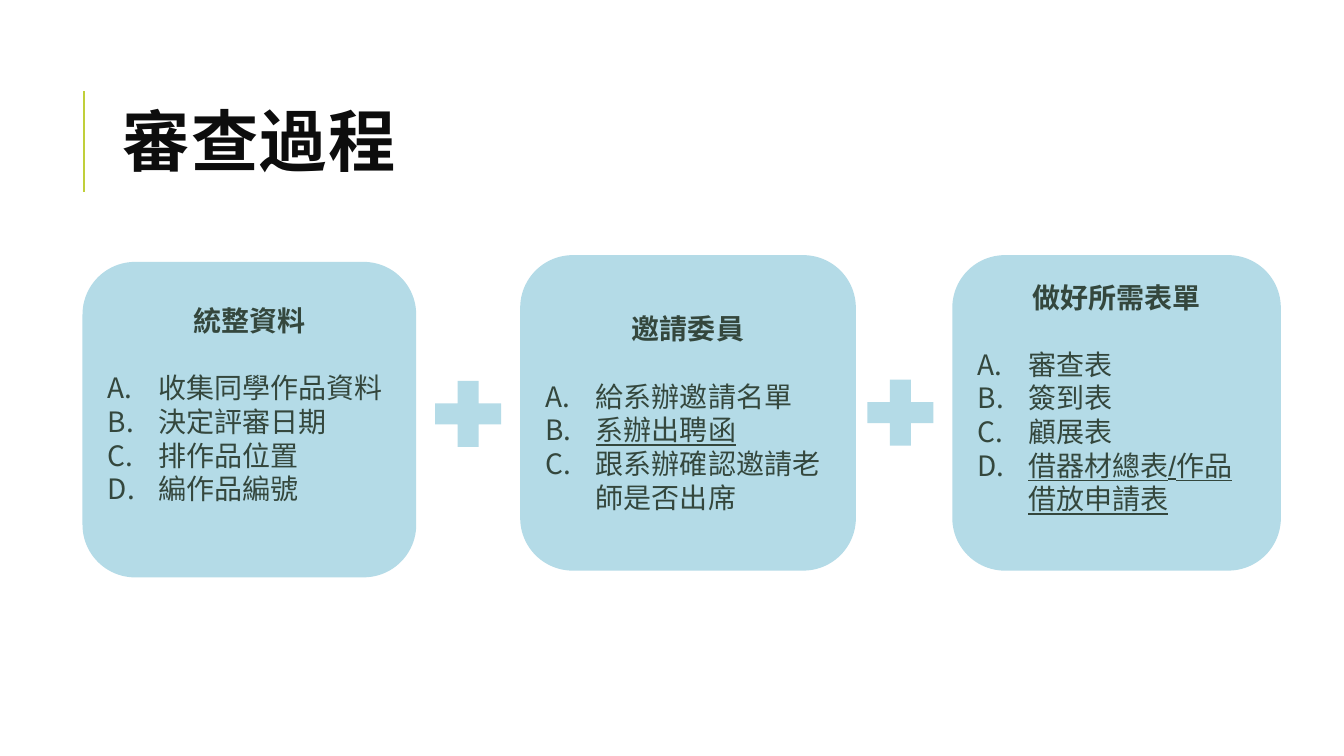
import pptx
import pptx.dml.color
import pptx.enum.shapes
import pptx.enum.text
import pptx.oxml.ns
import pptx.oxml.xmlchemy
import pptx.util
from pptx.util import Cm

SHAPES = pptx.enum.shapes.MSO_SHAPE
ALIGN = pptx.enum.text.PP_ALIGN
MIDDLE = pptx.enum.text.MSO_ANCHOR.MIDDLE
COLOURS = {"title": "0D0D0D", "text": "34473D", "card": "0989B1", "accent": "C0CF3A"}


def add_xml(parent, tag, **attributes):
    element = pptx.oxml.xmlchemy.OxmlElement(tag)
    for name, value in attributes.items():
        element.set(name, value)
    parent.append(element)


class ReviewSlide:
    body_size = 20
    line_height = 24
    list_indent = Cm(1.27)
    opacity = "30000"

    def __init__(self, presentation):
        self.slide = presentation.slides.add_slide(presentation.slide_layouts[6])

    def colour(self, name):
        return pptx.dml.color.RGBColor.from_string(COLOURS[name])

    def format_font(self, font, name, size, colour, bold=False, underline=False):
        font.name = name
        font.size = pptx.util.Pt(size)
        font.color.rgb = self.colour(colour)
        font.bold = bold
        font.underline = underline

    def title(self, text, left, top, width, height):
        box = self.slide.shapes.add_textbox(Cm(left), Cm(top), Cm(width), Cm(height))
        frame = box.text_frame
        frame.word_wrap = True
        frame.vertical_anchor = MIDDLE
        frame.text = text
        paragraph = frame.paragraphs[0]
        paragraph.line_spacing = 0.8
        run = paragraph.runs[0]
        self.format_font(run.font, "Cabin", 48, "title", bold=True)
        run._r.get_or_add_rPr().set("spc", "100")

    def rule(self, x, top, bottom):
        line = self.slide.shapes.add_connector(
            pptx.enum.shapes.MSO_CONNECTOR.STRAIGHT, Cm(x), Cm(bottom), Cm(x), Cm(top))
        line.line.color.rgb = self.colour("accent")
        line.line.width = pptx.util.Pt(1.5)
        add_xml(line._element.spPr, "a:effectLst")

    def tinted_shape(self, kind, left, top, width, height):
        shape = self.slide.shapes.add_shape(kind, Cm(left), Cm(top), Cm(width), Cm(height))
        shape.shadow.inherit = False
        shape.line.fill.background()
        shape.fill.solid()
        shape.fill.fore_color.rgb = self.colour("card")
        tint = shape._element.spPr.find(".//" + pptx.oxml.ns.qn("a:srgbClr"))
        add_xml(tint, "a:alpha", val=self.opacity)
        return shape

    def card(self, left, top, width, heading, steps, underlined=(), bottom_inset=0.13):
        """Add a rounded card with a heading and a lettered list."""
        shape = self.tinted_shape(SHAPES.ROUNDED_RECTANGLE, left, top, width, 7.95)
        frame = shape.text_frame
        frame.word_wrap = True
        frame.vertical_anchor = MIDDLE
        frame.margin_bottom = Cm(bottom_inset)
        frame.text = "\n".join([heading, *steps])
        title, *items = frame.paragraphs
        title.alignment = ALIGN.CENTER
        title.space_after = pptx.util.Pt(self.line_height)
        self.format_font(title.runs[0].font, "Arial", self.body_size, "text", bold=True)
        for item in items:
            item.alignment = ALIGN.LEFT
            properties = item._p.get_or_add_pPr()
            properties.set("marL", str(int(self.list_indent)))
            properties.set("indent", str(-int(self.list_indent)))
            add_xml(properties, "a:buFont", typeface="+mj-lt")
            add_xml(properties, "a:buAutoNum", type="alphaUcPeriod")
            self.format_font(item.runs[0].font, "Arial", self.body_size, "text",
                             underline=item.text in underlined)

    def plus(self, left, top):
        self.tinted_shape(SHAPES.MATH_PLUS, left, top, 2.26, 2.26)


def main():
    presentation = pptx.Presentation()
    presentation.slide_width = Cm(33.87)
    presentation.slide_height = Cm(19.05)
    review = ReviewSlide(presentation)

    review.rule(2.11, 2.29, 4.83)
    review.title("審查過程", 2.84, 1.63, 27, 4.17)
    review.card(2.08, 6.6, 8.41, "統整資料",
                ["收集同學作品資料", "決定評審日期", "排作品位置", "編作品編號"],
                bottom_inset=0.89)
    review.card(13.11, 6.43, 8.46, "邀請委員",
                ["給系辦邀請名單", "系辦出聘函", "跟系辦確認邀請老師是否出席"],
                underlined=["系辦出聘函"])
    review.plus(10.67, 9.3)
    review.card(24, 6.43, 8.28, "做好所需表單",
                ["審查表", "簽到表", "顧展表", "借器材總表/作品借放申請表"],
                underlined=["借器材總表/作品借放申請表"], bottom_inset=0.89)
    review.plus(21.56, 9.27)

    presentation.save("out.pptx")


if __name__ == "__main__":
    main()
